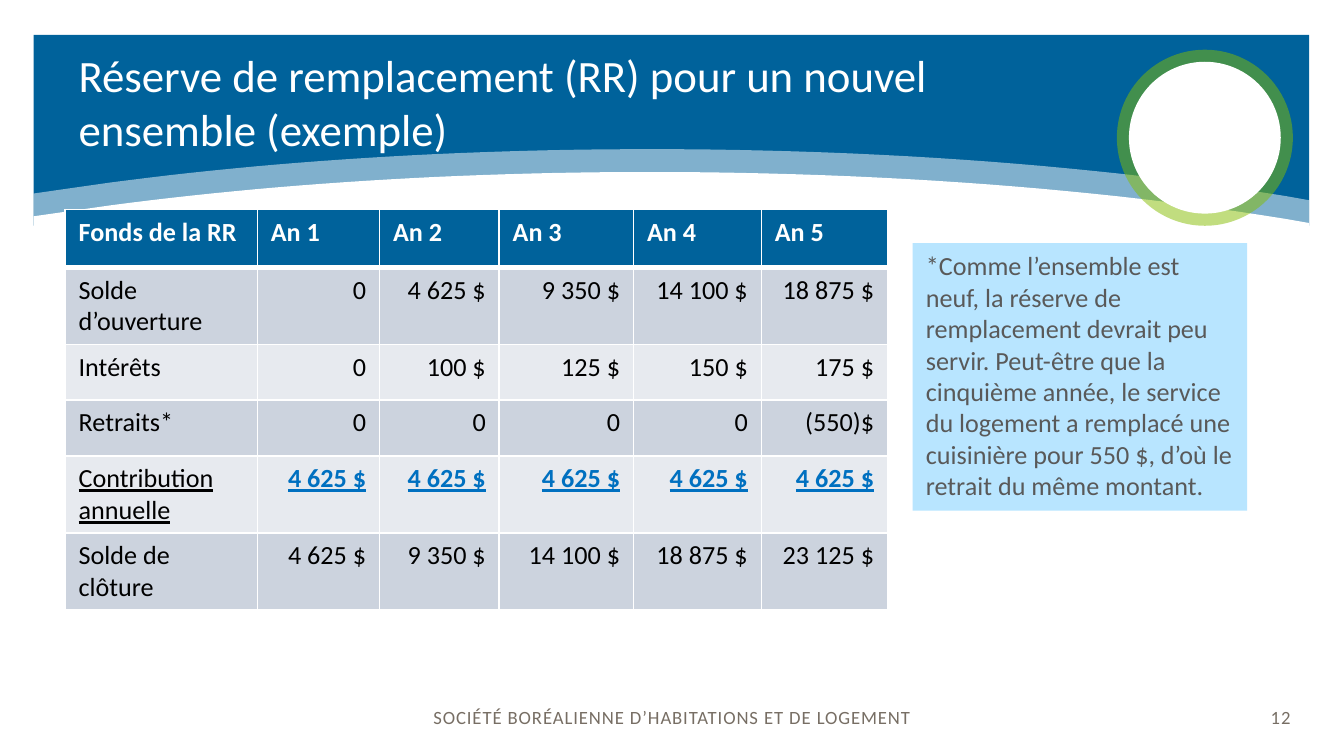
from lxml import etree
from pptx import Presentation
from pptx.dml.color import RGBColor
from pptx.enum.shapes import MSO_SHAPE
from pptx.enum.text import MSO_ANCHOR, PP_ALIGN
from pptx.oxml.ns import qn
from pptx.util import Inches, Pt

RECTANGLE, OVAL = MSO_SHAPE.RECTANGLE, MSO_SHAPE.OVAL
LEFT, CENTER, RIGHT = PP_ALIGN.LEFT, PP_ALIGN.CENTER, PP_ALIGN.RIGHT
TOP, MIDDLE = MSO_ANCHOR.TOP, MSO_ANCHOR.MIDDLE
COLORS = {
    "navy": "00629B", "white": "FFFFFF", "lime": "84BD00", "sky": "B8E5FF",
    "taupe": "776E64", "gray": "595959", "black": "000000", "link": "0070C0",
    "dark_band": "CCD3DE", "light_band": "E7EAEF",
}

deck = Presentation()
deck.slide_width = Inches(10)
deck.slide_height = deck.slide_width * 9 // 16
unit = deck.slide_width / 100
page = deck.slides.add_slide(deck.slide_layouts[5])
shapes = page.shapes


def paint(shape, color, alpha=100):
    shape.shadow.inherit = False
    shape.fill.solid()
    shape.fill.fore_color.rgb = RGBColor.from_string(COLORS[color])
    shape.line.fill.background()
    if alpha < 100:
        tone = shape.fill._xPr.find(qn("a:solidFill"))[0]
        etree.SubElement(tone, qn("a:alpha")).set("val", str(alpha * 1000))


def write(frame, text, color, size, align=LEFT, anchor=TOP, spacing=0, **formats):
    frame.word_wrap = True
    frame.vertical_anchor = anchor
    para = frame.paragraphs[0]
    para.alignment = align
    span = para.add_run()
    span.text = text
    span.font.name, span.font.size = "Calibri", Pt(size)
    span.font.color.rgb = RGBColor.from_string(COLORS[color])
    for name, value in formats.items():
        setattr(span.font, name, value)
    if spacing:
        span.font._element.set("spc", str(spacing))


banner = shapes.add_shape(RECTANGLE, *[int(n * unit) for n in (2.5, 2.6, 94.9, 14.2)])
paint(banner, "navy")

STEPS = 24
for crest, alpha in ((11.1, 50), (12.8, 100)):
    right_curve = ((48.4, 0), (65.9, 0), (82.2, 1.3), (95.7, 3.5))
    left_curve = ((8.1, 2.5), (20.1, 0.9), (33.8, 0), (48.4, 0))
    arcs = []
    for curve in (right_curve, left_curve):
        arc = []
        for step in range(STEPS + 1):
            t = step / STEPS
            weights = ((1 - t) ** 3, 3 * t * (1 - t) ** 2, 3 * t ** 2 * (1 - t), t ** 3)
            x, y = (sum(w * point[axis] for w, point in zip(weights, curve)) for axis in (0, 1))
            arc.append((x * unit, (crest + y) * unit))
        arcs.append(arc)
    corners = ((97.4, crest + 3.8), (97.4, 17.9), (2.5, 17.9), (2.5, crest + 3.3))
    outline = arcs[0] + [(x * unit, y * unit) for x, y in corners] + arcs[1]
    builder = shapes.build_freeform(*[int(n) for n in outline[0]])
    builder.add_line_segments(outline[1:], close=True)
    paint(builder.convert_to_shape(), "white", alpha)

footer = shapes.add_shape(RECTANGLE, *[int(n * unit) for n in (0, 50.5, 100, 5.75)])
paint(footer, "white")
for side in ("left", "top", "right", "bottom"):
    setattr(footer.text_frame, f"margin_{side}", 0)
write(footer.text_frame, "SOCIÉTÉ BORÉALIENNE D’HABITATIONS ET DE LOGEMENT",
      "taupe", 10, CENTER, MIDDLE, 50)

for left, top, diameter, color, alpha in (
    (83.1, 3.7, 13.1, "lime", 50), (84, 4.6, 11.3, "white", 100),
):
    circle = shapes.add_shape(OVAL, *[int(n * unit) for n in (left, top, diameter, diameter)])
    paint(circle, color, alpha)

ROWS = (
    ("Fonds de la RR", "An 1", "An 2", "An 3", "An 4", "An 5"),
    ("Solde d’ouverture", "0", "4 625 $", "9 350 $", "14 100 $", "18 875 $"),
    ("Intérêts", "0", "100 $", "125 $", "150 $", "175 $"),
    ("Retraits*", "0", "0", "0", "0", "(550)$"),
    ("Contribution annuelle",) + ("4 625 $",) * 5,
    ("Solde de clôture", "4 625 $", "9 350 $", "14 100 $", "18 875 $", "23 125 $"),
)
CONTRIBUTION = 4
table = shapes.add_table(
    len(ROWS), len(ROWS[0]), *[int(n * unit) for n in (4.85, 15.6, 61.2, 29.6)]
).table
for column, width in zip(table.columns, (14.3, 9.1, 8.9, 10, 9.5, 9.4)):
    column.width = int(width * unit)
for row, height in zip(table.rows, (4.3, 5.7, 4.15, 4.15, 5.7, 5.7)):
    row.height = int(height * unit)
for r, values in enumerate(ROWS):
    for c, value in enumerate(values):
        cell = table.cell(r, c)
        header, linked = r == 0, r == CONTRIBUTION and c > 0
        band = "navy" if header else "dark_band" if r % 2 else "light_band"
        cell.fill.solid()
        cell.fill.fore_color.rgb = RGBColor.from_string(COLORS[band])
        properties = cell._tc.get_or_add_tcPr()
        for index, edge in enumerate(("lnL", "lnR", "lnT", "lnB")):
            thick = (r, edge) in ((0, "lnB"), (1, "lnT"))
            border = etree.Element(qn(f"a:{edge}"), w=str(Pt(3 if thick else 1)))
            stroke = etree.SubElement(border, qn("a:solidFill"))
            etree.SubElement(stroke, qn("a:srgbClr"), val=COLORS["white"])
            properties.insert(index, border)
        write(cell.text_frame, value,
              "white" if header else "link" if linked else "black", 14,
              RIGHT if r and c else LEFT,
              bold=header or linked, underline=r == CONTRIBUTION)

number = shapes.add_textbox(*[int(n * unit) for n in (91.4, 50.5, 5.6, 5.75)])
write(number.text_frame, "12", "taupe", 10, RIGHT, MIDDLE, 50)

title = shapes.title
title.left, title.top, title.width, title.height = [int(n * unit) for n in (4.85, 3.05, 70.9, 9.1)]
write(title.text_frame, "Réserve de remplacement (RR) pour un nouvel ensemble (exemple)", "white", 24)
shapes._spTree.append(title._element)

note = shapes.add_shape(RECTANGLE, *[int(n * unit) for n in (67.9, 18.1, 24.9, 19.9)])
paint(note, "sky")
write(note.text_frame,
      "*Comme l’ensemble est neuf, la réserve de remplacement devrait peu servir. "
      "Peut-être que la cinquième année, le service du logement a remplacé une "
      "cuisinière pour 550 $, d’où le retrait du même montant.", "gray", 14)

deck.save("out.pptx")
